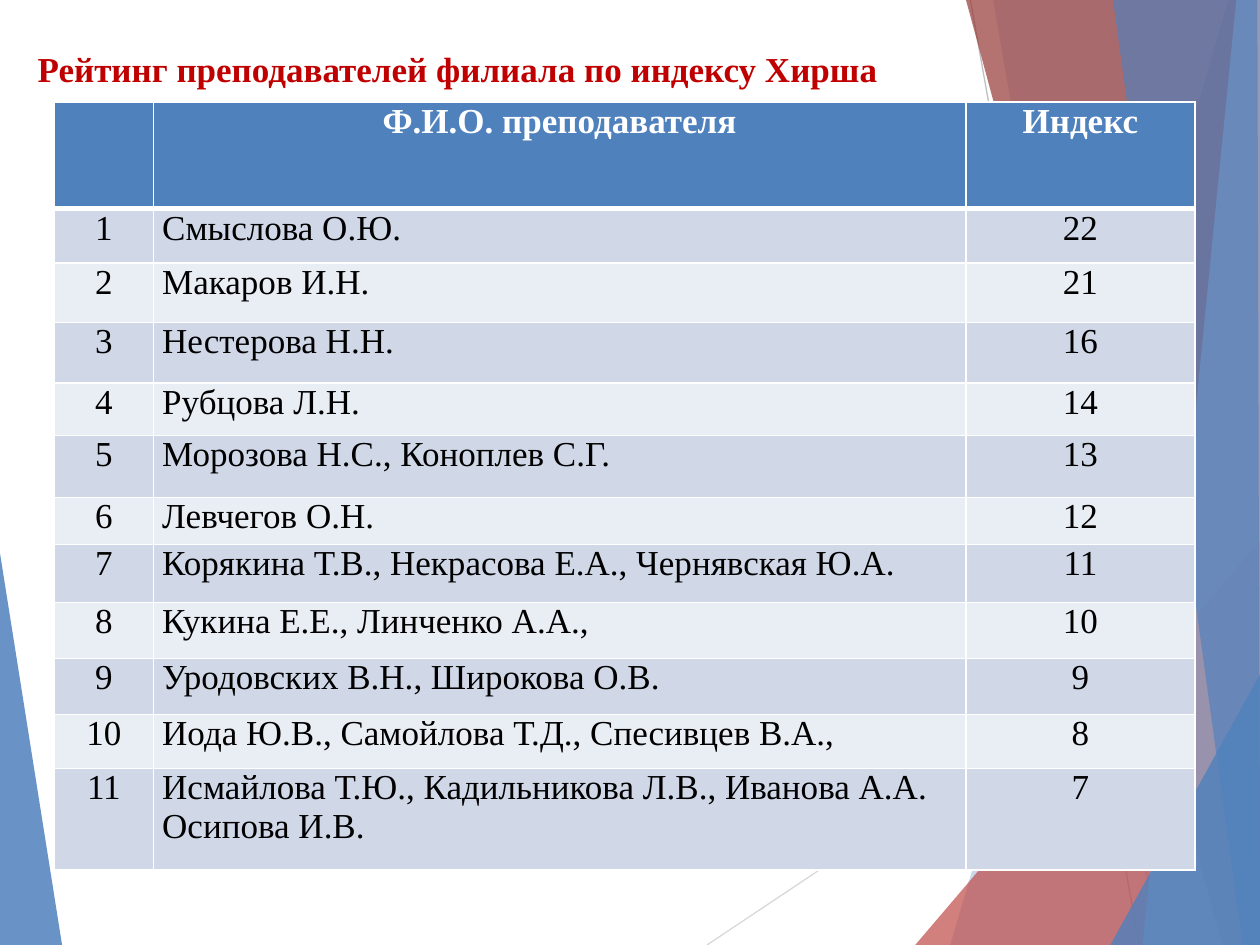
from lxml import etree
from pptx import Presentation
from pptx.dml.color import RGBColor
from pptx.enum.shapes import MSO_CONNECTOR
from pptx.enum.text import MSO_ANCHOR, PP_ALIGN
from pptx.oxml.ns import qn
from pptx.util import Pt

LEFT, CENTER = PP_ALIGN.LEFT, PP_ALIGN.CENTER
TOP = MSO_ANCHOR.TOP
STRAIGHT = MSO_CONNECTOR.STRAIGHT

FONT = "Times New Roman"
WHITE = RGBColor(0xFF, 0xFF, 0xFF)
BLACK = RGBColor(0, 0, 0)
TITLE_RED = RGBColor(0xC0, 0, 0)
BLUE = RGBColor(0x4F, 0x81, 0xBD)
PALE_BLUE = RGBColor(0x95, 0xB3, 0xD7)
RED = RGBColor(0xC0, 0x50, 0x4D)
DARK_RED = RGBColor(0x95, 0x37, 0x35)
LIGHT_GRAY = RGBColor(0xD9, 0xD9, 0xD9)
GRAY = RGBColor(0xBF, 0xBF, 0xBF)
BAND_DARK = RGBColor(0xD0, 0xD8, 0xE8)
BAND_LIGHT = RGBColor(0xE9, 0xED, 0xF4)

LEFT_FACET = ([(0, 316), (35.5, 540), (0, 540)], BLUE, 85)
RAYS = [
    ((404, 540), (720, 329), LIGHT_GRAY),
    ((554.5, 0), (651, 540), GRAY),
]
RIGHT_FACETS = [
    ([(702, 0), (543, 540), (720, 540), (720, 0)], BLUE, 30),
    ([(567.5, 0), (661.5, 540), (720, 540), (720, 0)], BLUE, 20),
    ([(523, 540), (720, 309), (720, 540)], RED, 72),
    ([(552, 0), (698.5, 540), (720, 540), (720, 0)], DARK_RED, 70),
    ([(706.5, 0), (653, 540), (720, 540), (720, 0)], PALE_BLUE, 70),
    ([(636, 0), (710, 540), (720, 540), (718.5, 0)], BLUE, 65),
    ([(634.5, 540), (720, 385.5), (720, 540)], BLUE, 80),
]

HEADER = ("", "Ф.И.О. преподавателя", "Индекс")
RATING = [
    ("Смыслова О.Ю.", 22),
    ("Макаров И.Н.", 21),
    ("Нестерова Н.Н.", 16),
    ("Рубцова Л.Н.", 14),
    ("Морозова Н.С., Коноплев С.Г.", 13),
    ("Левчегов О.Н.", 12),
    ("Корякина Т.В., Некрасова Е.А., Чернявская Ю.А.", 11),
    ("Кукина Е.Е., Линченко А.А.,", 10),
    ("Уродовских В.Н., Широкова О.В.", 9),
    ("Иода Ю.В., Самойлова Т.Д., Спесивцев В.А.,", 8),
    ("Исмайлова Т.Ю., Кадильникова Л.В., Иванова А.А. Осипова И.В.", 7),
]
COL_SHARES = (0.087, 0.712, 0.201)
ROW_HEIGHTS = (61, 31, 34, 34.5, 30, 35.5, 27, 33, 32, 32, 31, 58)


def write_text(tf, text, size=20, color=BLACK, bold=False, align=LEFT):
    """Write one formatted paragraph into a text frame."""
    p = tf.paragraphs[0]
    p.alignment = align
    r = p.add_run()
    r.text = text
    r.font.name = FONT
    r.font.size = Pt(size)
    r.font.bold = bold
    r.font.color.rgb = color


def add_facet(s, x, y, points, color, opacity):
    """Draw a translucent polygon with points relative to (x, y)."""
    corners = [(Pt(x + px), Pt(y + py)) for px, py in points]
    builder = s.shapes.build_freeform(*corners[0], scale=1.0)
    builder.add_line_segments(corners[1:], close=True)
    sp = builder.convert_to_shape()
    sp.shadow.inherit = False
    sp.line.fill.background()
    sp.fill.solid()
    sp.fill.fore_color.rgb = color
    clr = sp.fill._xPr.find(".//" + qn("a:srgbClr"))
    etree.SubElement(clr, qn("a:alpha"), val=str(opacity * 1000))


def add_ray(s, x, y, start, end, color):
    """Draw a thin line with its ends relative to (x, y)."""
    (x1, y1), (x2, y2) = start, end
    line = s.shapes.add_connector(STRAIGHT, Pt(x + x1), Pt(y + y1), Pt(x + x2), Pt(y + y2))
    line.line.color.rgb = color
    line.line.width = Pt(0.75)
    etree.SubElement(line._element.spPr, qn("a:effectLst"))


def add_backdrop(s, x, y):
    """Draw the facets and rays behind the content."""
    add_facet(s, x, y, *LEFT_FACET)
    for ray in RAYS:
        add_ray(s, x, y, *ray)
    for facet in RIGHT_FACETS:
        add_facet(s, x, y, *facet)


def add_title(s, x, y, w, h):
    """Place the slide heading."""
    tf = s.shapes.add_textbox(Pt(x), Pt(y), Pt(w), Pt(h)).text_frame
    tf.word_wrap = True
    tf.vertical_anchor = TOP
    tf.margin_top = Pt(6)
    write_text(tf, "Рейтинг преподавателей филиала по индексу Хирша", color=TITLE_RED, bold=True)


def set_borders(cell, **widths):
    """Give the cell white borders of the given widths in points."""
    tc_pr = cell._tc.get_or_add_tcPr()
    for i, (side, width) in enumerate(widths.items()):
        ln = etree.Element(qn("a:ln" + side), w=str(Pt(width)))
        fill = etree.SubElement(ln, qn("a:solidFill"))
        etree.SubElement(fill, qn("a:srgbClr"), val=str(WHITE))
        tc_pr.insert(i, ln)


def add_rating(s, x, y, w):
    """Place the rating table, numbering its rows."""
    rows = [HEADER] + [(i, *entry) for i, entry in enumerate(RATING, 1)]
    frame = s.shapes.add_table(len(rows), len(HEADER), Pt(x), Pt(y), Pt(w), Pt(sum(ROW_HEIGHTS)))
    table = frame.table
    table.first_row = table.horz_banding = False
    for col, share in zip(table.columns, COL_SHARES):
        col.width = Pt(round(w * share, 1))
    for i, (values, height) in enumerate(zip(rows, ROW_HEIGHTS)):
        table.rows[i].height = Pt(height)
        head = i == 0
        band = BLUE if head else (BAND_LIGHT, BAND_DARK)[i % 2]
        for j, value in enumerate(values):
            cell = table.cell(i, j)
            cell.margin_left = cell.margin_right = Pt(5)
            cell.margin_top = cell.margin_bottom = 0
            cell.fill.solid()
            cell.fill.fore_color.rgb = band
            set_borders(cell, L=1, R=1, T=3 if i == 1 else 1, B=3 if head else 1)
            if value:
                write_text(cell.text_frame, str(value), color=WHITE if head else BLACK,
                           bold=head, align=CENTER if head or j != 1 else LEFT)


def main():
    """Build the rating slide and save it."""
    prs = Presentation()
    prs.slide_width, prs.slide_height = Pt(720), Pt(540)
    s = prs.slides.add_slide(prs.slide_layouts[6])
    add_backdrop(s, 0, 0)
    add_title(s, 14.4, 21, 516, 39.6)
    add_rating(s, 31, 58.3, 652)
    prs.save("out.pptx")


if __name__ == "__main__":
    main()
